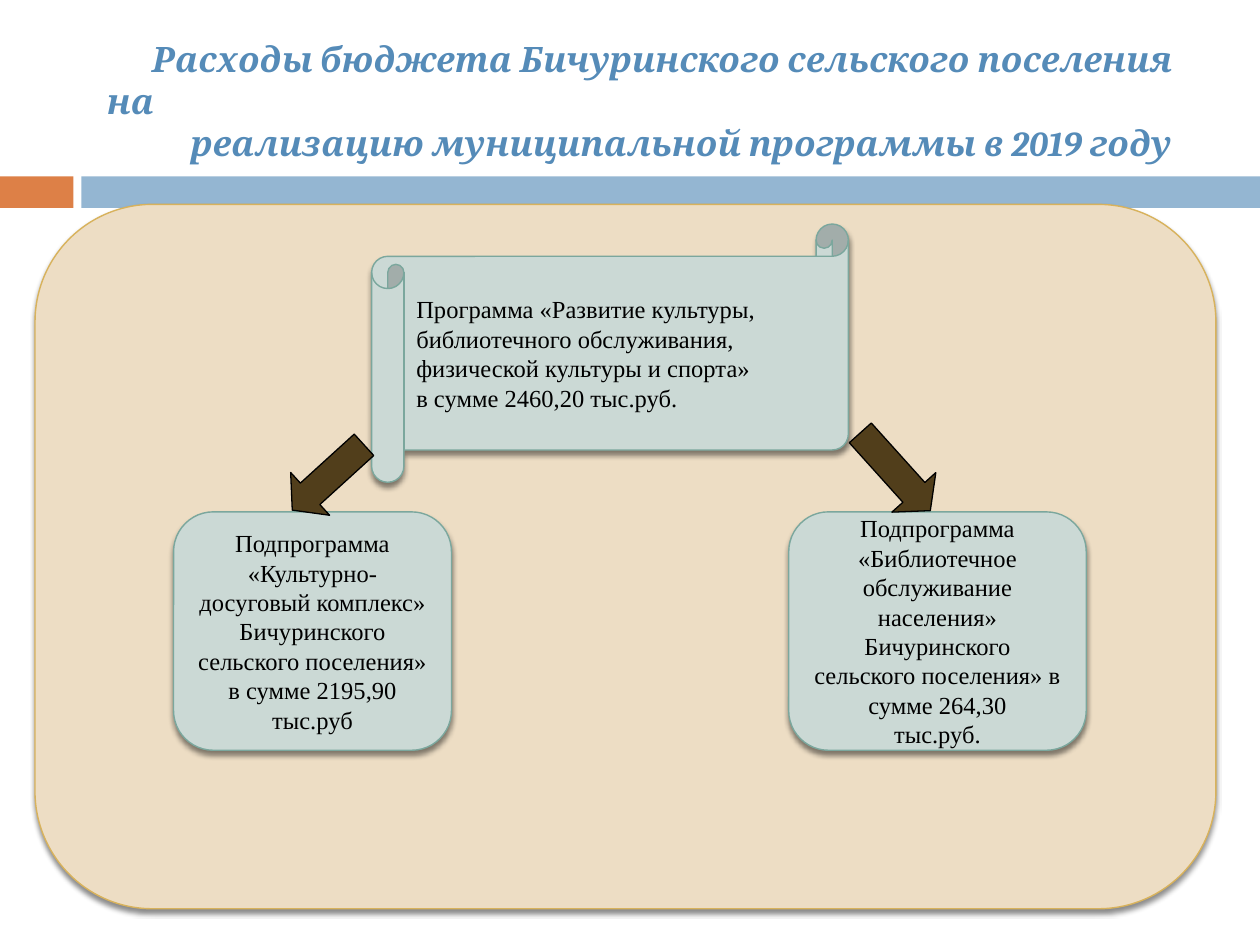
from lxml import etree
from pptx import Presentation
from pptx.dml.color import RGBColor
from pptx.enum.shapes import MSO_SHAPE
from pptx.enum.text import MSO_ANCHOR, PP_ALIGN
from pptx.oxml import parse_xml
from pptx.util import Pt

RECT, ROUND = MSO_SHAPE.RECTANGLE, MSO_SHAPE.ROUNDED_RECTANGLE
SCROLL, CARD = MSO_SHAPE.HORIZONTAL_SCROLL, MSO_SHAPE.FLOWCHART_ALTERNATE_PROCESS
ARROW = MSO_SHAPE.RIGHT_ARROW
LEFT, CENTER, MIDDLE = PP_ALIGN.LEFT, PP_ALIGN.CENTER, MSO_ANCHOR.MIDDLE

ORANGE = RGBColor(0xDD, 0x80, 0x47)
BLUE = RGBColor(0x94, 0xB6, 0xD2)
TITLE = RGBColor(0x55, 0x8B, 0xB8)
SAND = RGBColor(0xED, 0xDD, 0xC4)
GOLD = RGBColor(0xD8, 0xB2, 0x5C)
MINT = RGBColor(0xCB, 0xD9, 0xD5)
TEAL = RGBColor(0x7B, 0xA7, 0x9D)
BROWN = RGBColor(0x51, 0x3E, 0x1B)
BLACK = RGBColor(0, 0, 0)

SHADOW = (
    '<a:effectLst xmlns:a="http://schemas.openxmlformats.org/drawingml/2006/main">'
    '<a:outerShdw blurRad="38100" dist="30480" dir="5400000" rotWithShape="0">'
    '<a:srgbClr val="000000"><a:alpha val="45000"/></a:srgbClr>'
    '</a:outerShdw></a:effectLst>'
)

deck = Presentation()
deck.slide_width, deck.slide_height = Pt(720), Pt(540)
slide = deck.slides.add_slide(deck.slide_layouts[6])


def draw(kind, box, fill, line=None, width=0.79, soft=False):
    shape = slide.shapes.add_shape(kind, *map(Pt, box))
    shape.shadow.inherit = False
    shape.fill.solid()
    shape.fill.fore_color.rgb = fill
    if line is None:
        shape.line.fill.background()
    else:
        shape.line.color.rgb = line
        shape.line.width = Pt(width)
    if soft:
        props = shape.fill._xPr
        old = props.find("{*}effectLst")
        props.replace(old, parse_xml(SHADOW))
    return shape


def write(shape, lines, align, look):
    frame = shape.text_frame
    frame.word_wrap = True
    frame.vertical_anchor = MIDDLE
    for i, text in enumerate(lines):
        para = frame.paragraphs[0] if i == 0 else frame.add_paragraph()
        para.alignment = align
        run = para.add_run()
        run.text = text
        for name, value in look.items():
            if name == "color":
                run.font.color.rgb = value
            else:
                setattr(run.font, name, value)
    return frame


# Header bars and panel
draw(RECT, (0, 100.8, 42, 18), ORANGE)
draw(RECT, (46.5, 100.8, 673.5, 18), BLUE)
draw(ROUND, (20, 116.8, 674.8, 402.5), SAND, GOLD, soft=True)

# Title with first-line indents
head = slide.shapes.add_textbox(Pt(54), Pt(26), Pt(630), Pt(62.6))
look = {"name": "Cambria", "size": Pt(20), "bold": True, "italic": True, "color": TITLE}
frame = write(head, [
    "Расходы бюджета Бичуринского сельского поселения на",
    "реализацию муниципальной программы в 2019 году",
], LEFT, look)
for para, gap in zip(frame.paragraphs, (25.7, 48)):
    para._p.get_or_add_pPr().set("indent", str(Pt(gap)))

# Programme scroll and its two subprogrammes
look = {"name": "Times New Roman", "size": Pt(14), "color": BLACK}
for kind, box, align, lines in [
    (SCROLL, (212.4, 128, 272.4, 147.6), LEFT, [
        "Программа «Развитие культуры, библиотечного обслуживания, "
        "физической культуры и спорта»",
        "в сумме 2460,20 тыс.руб."]),
    (CARD, (99.2, 292.5, 158.8, 136.2), CENTER, [
        "Подпрограмма «Культурно-досуговый комплекс» Бичуринского "
        "сельского поселения» в сумме 2195,90 тыс.руб"]),
    (CARD, (450.7, 292.5, 170, 136.2), CENTER, [
        "Подпрограмма «Библиотечное обслуживание населения» Бичуринского "
        "сельского поселения» в сумме 264,30",
        "тыс.руб."]),
]:
    write(draw(kind, box, MINT, TEAL, soft=True), lines, align, look)

# Arrows from the programme to each part
for box, turn in [((481.7, 252.7, 59.8, 33.8), 48), ((159.8, 256.3, 55.4, 33.1), 137.7)]:
    arrow = draw(ARROW, box, BROWN, BLACK, 0.75)
    arrow.rotation = turn
    arrow.adjustments[1] = 0.416

deck.save("out.pptx")
